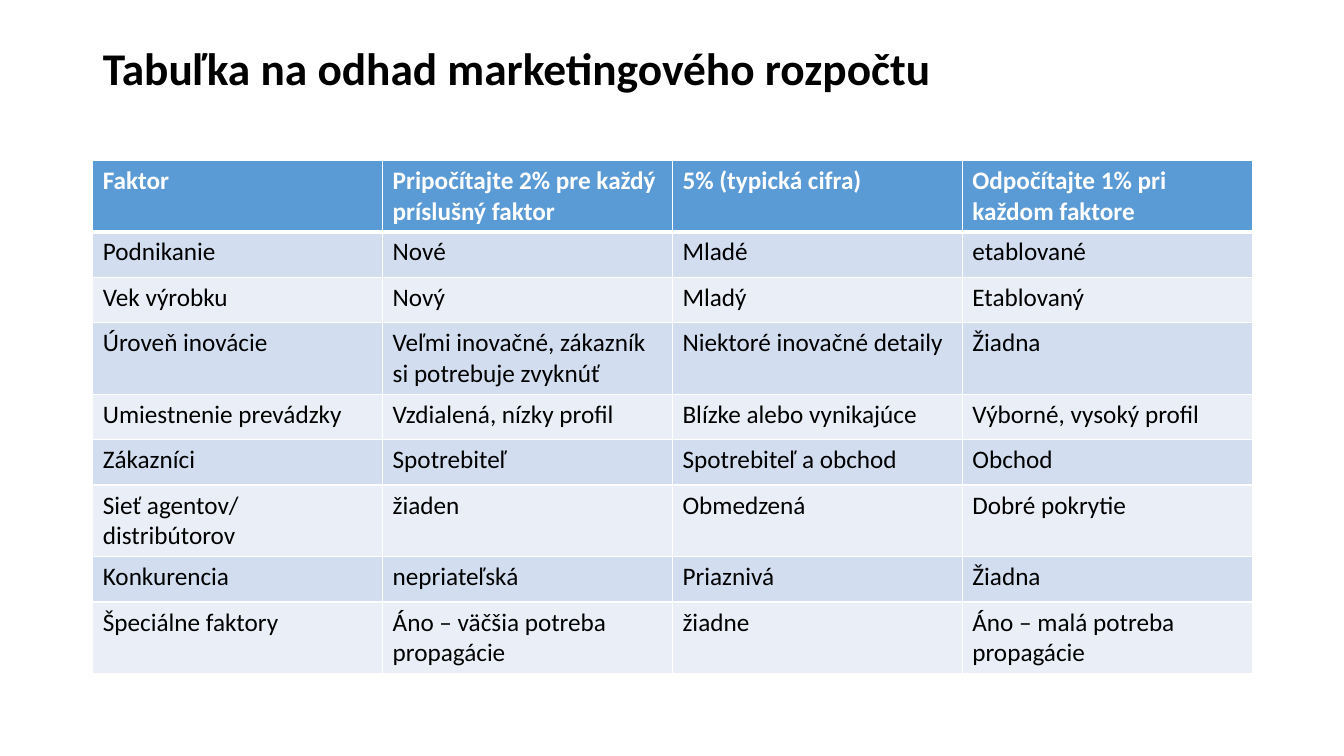
from dataclasses import dataclass

from lxml.etree import SubElement
from pptx import Presentation
from pptx.dml.color import RGBColor
from pptx.enum.text import MSO_ANCHOR, MSO_AUTO_SIZE, PP_ALIGN
from pptx.oxml.ns import qn
from pptx.util import Inches, Pt

TITLE = "Tabuľka na odhad marketingového rozpočtu"
ROWS = [
    ("Faktor", "Pripočítajte 2% pre každý príslušný faktor",
     "5% (typická cifra)", "Odpočítajte 1% pri každom faktore"),
    ("Podnikanie", "Nové", "Mladé", "etablované"),
    ("Vek výrobku", "Nový", "Mladý", "Etablovaný"),
    ("Úroveň inovácie", "Veľmi inovačné, zákazník si potrebuje zvyknúť",
     "Niektoré inovačné detaily", "Žiadna"),
    ("Umiestnenie prevádzky", "Vzdialená, nízky profil",
     "Blízke alebo vynikajúce", "Výborné, vysoký profil"),
    ("Zákazníci", "Spotrebiteľ", "Spotrebiteľ a obchod", "Obchod"),
    ("Sieť agentov/ distribútorov", "žiaden", "Obmedzená", "Dobré pokrytie"),
    ("Konkurencia", "nepriateľská", "Priaznivá", "Žiadna"),
    ("Špeciálne faktory", "Áno – väčšia potreba propagácie",
     "žiadne", "Áno – malá potreba propagácie"),
]


@dataclass(frozen=True)
class Theme:
    font: str = "Calibri"
    title: float = 32.4
    body: float = 18
    ink: str = "000000"
    paper: str = "FFFFFF"
    head: str = "5B9BD5"
    bands: tuple = ("D2DEEF", "EAEFF7")
    rule: float = 1
    heavy: float = 3


THEME = Theme()
LEFT, WIDTH = 0.92, 11.5
TOP, ROW = 1.59, 0.45


def write(frame, text, size, color, bold):
    run = frame.paragraphs[0].add_run()
    run.text = text
    font = run.font
    font.name, font.size, font.bold = THEME.font, Pt(size), bold
    font.color.rgb = RGBColor.from_string(color)


def border(cell, widths):
    """Draw the cell's borders; they must precede its fill in the XML."""
    props = cell._tc.get_or_add_tcPr()
    for side, width in widths.items():
        line = SubElement(props, qn(f"a:ln{side}"), w=str(Pt(width)))
        fill = SubElement(line, qn("a:solidFill"))
        SubElement(fill, qn("a:srgbClr"), val=THEME.paper)


def add_title(slide):
    title = slide.shapes.title
    title.left, title.top = Inches(LEFT), Inches(0.4)
    title.width, title.height = Inches(WIDTH), Inches(0.6)
    frame = title.text_frame
    frame.auto_size = MSO_AUTO_SIZE.NONE
    frame.word_wrap = True
    frame.vertical_anchor = MSO_ANCHOR.MIDDLE
    frame.paragraphs[0].alignment = PP_ALIGN.LEFT
    frame.paragraphs[0].line_spacing = 0.9
    write(frame, TITLE, THEME.title, THEME.ink, True)


def add_grid(slide):
    count = len(ROWS)
    table = slide.shapes.add_table(
        count, len(ROWS[0]), Inches(LEFT), Inches(TOP),
        Inches(WIDTH), Inches(ROW * count)).table
    for r, row in enumerate(ROWS):
        head = r == 0
        fill = THEME.head if head else THEME.bands[(r - 1) % 2]
        color = THEME.paper if head else THEME.ink
        widths = dict.fromkeys("LRTB", THEME.rule)
        if head:
            widths["B"] = THEME.heavy
        elif r == 1:
            widths["T"] = THEME.heavy
        for c, text in enumerate(row):
            cell = table.cell(r, c)
            border(cell, widths)
            cell.fill.solid()
            cell.fill.fore_color.rgb = RGBColor.from_string(fill)
            write(cell.text_frame, text, THEME.body, color, head)


def main():
    deck = Presentation()
    deck.slide_width, deck.slide_height = Inches(13.33), Inches(7.5)
    slide = deck.slides.add_slide(deck.slide_layouts[5])
    add_title(slide)
    add_grid(slide)
    deck.save("out.pptx")


if __name__ == "__main__":
    main()
